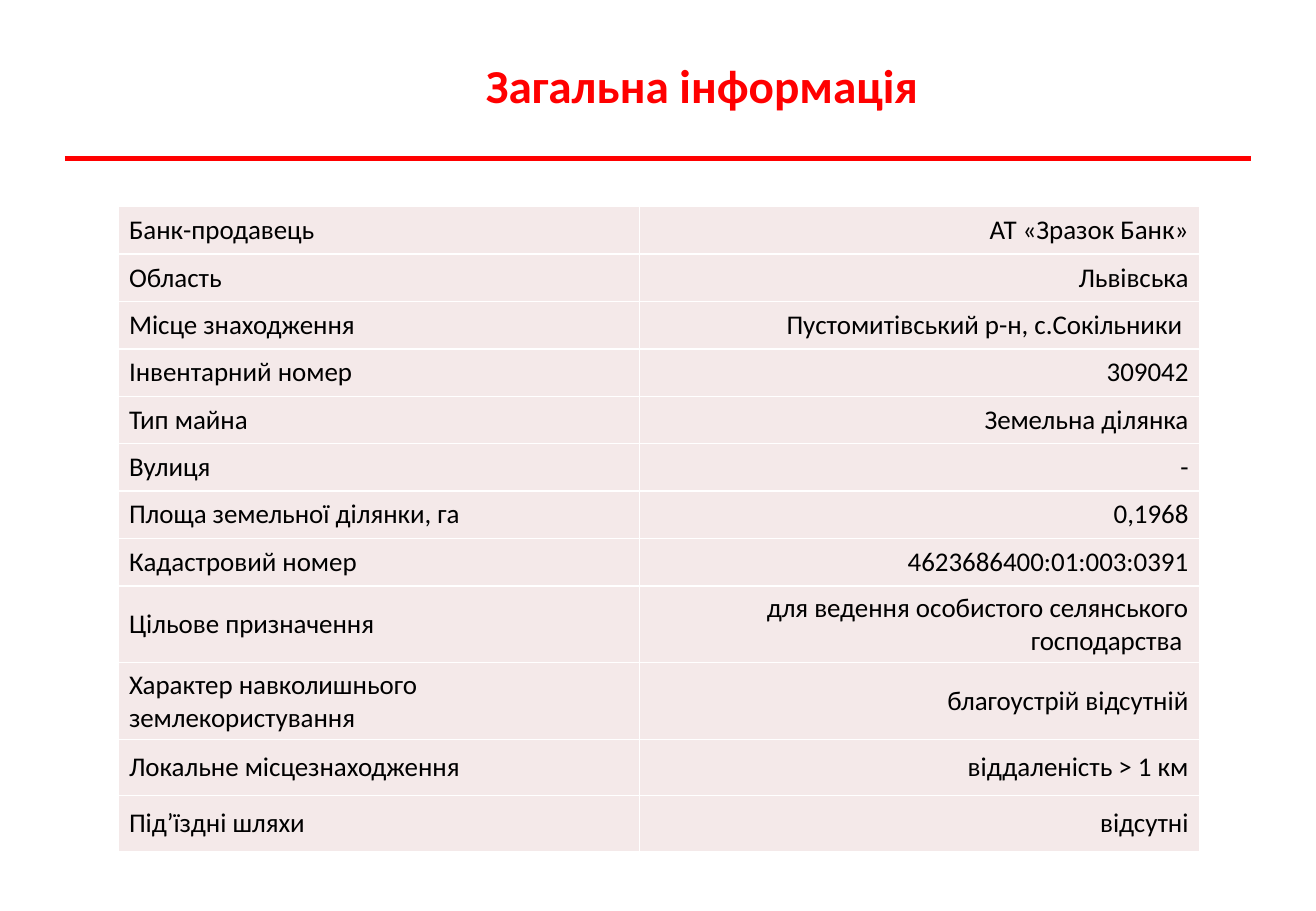
"""Build the land plot overview slide with a title, a rule and a facts table."""
from lxml import etree
from pptx import Presentation
from pptx import util as u
from pptx.dml.color import RGBColor
from pptx.enum import shapes, text
from pptx.oxml.ns import qn

COLORS = {"accent": "FF0000", "text": "000000", "cell": "F4E9E9", "border": "FFFFFF"}
FACTS = [
    ("Банк-продавець", "АТ «Зразок Банк»", 28.1),
    ("Область", "Львівська", 28.1),
    ("Місце знаходження", "Пустомитівський р-н, с.Сокільники ", 28.1),
    ("Інвентарний номер", "309042", 28.1),
    ("Тип майна", "Земельна ділянка", 28.1),
    ("Вулиця", "-", 28.1),
    ("Площа земельної ділянки, га", "0,1968", 28.1),
    ("Кадастровий номер", "4623686400:01:003:0391", 28.1),
    ("Цільове призначення", "для ведення особистого селянського господарства ", 45.5),
    ("Характер навколишнього землекористування", "благоустрій відсутній", 45.5),
    ("Локальне місцезнаходження", "віддаленість > 1 км", 33.2),
    ("Під’їздні шляхи", "відсутні", 33.2),
]
ALIGNMENTS = (text.PP_ALIGN.LEFT, text.PP_ALIGN.RIGHT)


def style_text(frame, size, color, alignment, bold=False):
    para = frame.paragraphs[0]
    para.alignment = alignment
    for span in para.runs:
        span.font.name = "Calibri"
        span.font.size = u.Pt(size)
        span.font.bold = bold
        span.font.color.rgb = RGBColor.from_string(COLORS[color])


def add_borders(cell):
    properties = cell._tc.get_or_add_tcPr()
    for position, side in enumerate(("lnL", "lnR", "lnT", "lnB")):
        border = etree.Element(qn(f"a:{side}"), w=str(u.Pt(1)))
        fill = etree.SubElement(border, qn("a:solidFill"))
        etree.SubElement(fill, qn("a:srgbClr"), val=COLORS["border"])
        properties.insert(position, border)


deck = Presentation()
deck.slide_width, deck.slide_height = u.Pt(780), u.Pt(540)
page = deck.slides.add_slide(deck.slide_layouts[6])

rule = page.shapes.add_connector(
    shapes.MSO_CONNECTOR.STRAIGHT, u.Pt(38.5), u.Pt(94), u.Pt(741.5), u.Pt(94))
rule.line.color.rgb = RGBColor.from_string(COLORS["accent"])
rule.line.width = u.Pt(3)
etree.SubElement(rule._element.spPr, qn("a:effectLst"))

title = page.shapes.add_textbox(u.Pt(124), u.Pt(21), u.Pt(584), u.Pt(58))
title.text_frame.word_wrap = True
title.text_frame.vertical_anchor = text.MSO_ANCHOR.MIDDLE
title.text_frame.text = "Загальна інформація"
style_text(title.text_frame, 28, "accent", text.PP_ALIGN.CENTER, bold=True)

table_height = sum(height for _, _, height in FACTS)
table = page.shapes.add_table(
    len(FACTS), 2, u.Pt(70), u.Pt(122.5), u.Pt(641), u.Pt(table_height)).table
table.first_row = table.horz_banding = False
table.columns[0].width, table.columns[1].width = u.Pt(309), u.Pt(332)

for row_index, (label, value, height) in enumerate(FACTS):
    table.rows[row_index].height = u.Pt(height)
    for column_index, content in enumerate((label, value)):
        cell = table.cell(row_index, column_index)
        cell.text_frame.text = content
        cell.vertical_anchor = text.MSO_ANCHOR.MIDDLE
        cell.margin_left = cell.margin_right = u.Pt(6.5)
        cell.margin_top = cell.margin_bottom = u.Pt(3.5)
        cell.fill.solid()
        cell.fill.fore_color.rgb = RGBColor.from_string(COLORS["cell"])
        add_borders(cell)
        style_text(cell.text_frame, 16, "text", ALIGNMENTS[column_index])

deck.save("out.pptx")
